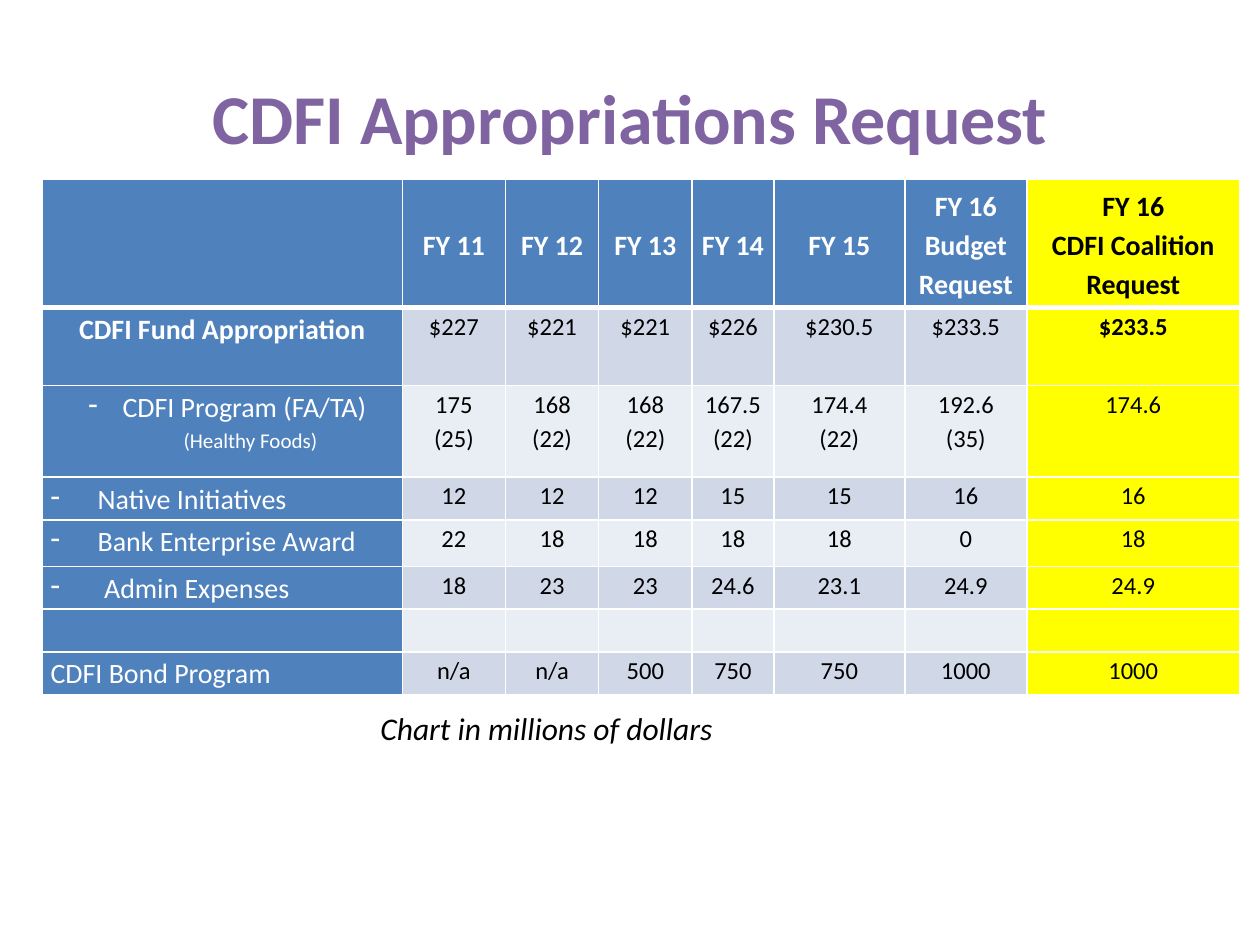
from lxml.etree import SubElement
from pptx import Presentation
from pptx.dml.color import RGBColor
from pptx.enum.text import MSO_ANCHOR, PP_ALIGN
from pptx.oxml.ns import qn
from pptx.util import Cm, Pt

COLORS = {
    "title": "8064A2", "header": "4F81BD", "band_dark": "D0D8E8",
    "band_light": "E9EDF4", "highlight": "FFFF00",
    "white": "FFFFFF", "black": "000000",
}
COLUMN_WIDTHS = [7.26, 2.08, 1.88, 1.88, 1.65, 2.64, 2.46, 4.29]
ROW_HEIGHTS = [2.59, 1.57, 1.85, 0.86, 0.94, 0.86, 0.86, 0.86]

HEADINGS = ["", "FY 11", "FY 12", "FY 13", "FY 14", "FY 15",
            "FY 16\nBudget\nRequest", "FY 16\nCDFI Coalition\nRequest"]

# Each label line: text, size, left margin, hanging indent (dash if nonzero)
LABELS = [
    [("CDFI Fund Appropriation", 16, 0, 0)],
    [("CDFI Program (FA/TA)", 16, 1.45, 0.69), ("(Healthy Foods)", 12, 2.68, 0)],
    [("Native Initiatives", 16, 0.95, 0.95)],
    [("Bank Enterprise Award", 16, 0.95, 0.95)],
    [("Admin Expenses", 16, 1.08, 1.08)],
    [],
    [("CDFI Bond Program", 16, 0, 0)],
]
VALUES = [
    ["$227", "$221", "$221", "$226", "$230.5", "$233.5", "$233.5"],
    ["175\n(25)", "168\n(22)", "168\n(22)", "167.5\n(22)", "174.4\n(22)",
     "192.6\n(35)", "174.6"],
    ["12", "12", "12", "15", "15", "16", "16"],
    ["22", "18", "18", "18", "18", "0", "18"],
    ["18", "23", "23", "24.6", "23.1", "24.9", "24.9"],
    [""] * 7,
    ["n/a", "n/a", "500", "750", "750", "1000", "1000"],
]


class SlideBuilder:
    font_name = "Calibri"
    line_spacing = 1.15

    def __init__(self, presentation):
        self.slide = presentation.slides.add_slide(presentation.slide_layouts[6])

    def style(self, paragraph, size, color, bold=False, italic=False,
              align=PP_ALIGN.CENTER):
        paragraph.alignment = align
        font = paragraph.font
        font.name, font.size = self.font_name, Pt(size)
        font.bold, font.italic = bold, italic
        font.color.rgb = RGBColor.from_string(COLORS[color])

    def text_box(self, text, left, top, width, height, size, color,
                 anchor=MSO_ANCHOR.TOP, **style):
        shape = self.slide.shapes.add_textbox(Cm(left), Cm(top), Cm(width), Cm(height))
        frame = shape.text_frame
        frame.word_wrap = True
        frame.vertical_anchor = anchor
        frame.text = text
        self.style(frame.paragraphs[0], size, color, **style)

    def table(self, left, top):
        shape = self.slide.shapes.add_table(
            len(ROW_HEIGHTS), len(COLUMN_WIDTHS), Cm(left), Cm(top),
            Cm(sum(COLUMN_WIDTHS)), Cm(sum(ROW_HEIGHTS)))
        table = shape.table
        table.horz_banding = False
        for column, width in zip(table.columns, COLUMN_WIDTHS):
            column.width = Cm(width)
        for row, height in zip(table.rows, ROW_HEIGHTS):
            row.height = Cm(height)
        return table

    def cell(self, cell, fill, bottom_border=1):
        cell.margin_left = cell.margin_right = Cm(0.17)
        cell.margin_top = cell.margin_bottom = 0
        properties = cell._tc.get_or_add_tcPr()
        for side in "LRTB":
            width = bottom_border if side == "B" else 1
            line = SubElement(properties, qn(f"a:ln{side}"), w=str(Pt(width)))
            line_fill = SubElement(line, qn("a:solidFill"))
            SubElement(line_fill, qn("a:srgbClr"), val=COLORS["white"])
        cell.fill.solid()
        cell.fill.fore_color.rgb = RGBColor.from_string(COLORS[fill])

    def cell_text(self, cell, text, size, color, bold=False):
        if not text:
            return
        cell.text_frame.text = text
        for paragraph in cell.text_frame.paragraphs:
            paragraph.line_spacing = self.line_spacing
            self.style(paragraph, size, color, bold)

    def label(self, cell, lines):
        frame = cell.text_frame
        for index, (text, size, margin, hanging) in enumerate(lines):
            paragraph = frame.add_paragraph() if index else frame.paragraphs[0]
            paragraph.text = text
            paragraph.line_spacing = self.line_spacing
            properties = paragraph._p.get_or_add_pPr()
            properties.set("marL", str(Cm(margin)))
            properties.set("indent", str(-Cm(hanging)))
            if hanging:
                SubElement(properties, qn("a:buChar"), char="-")
            self.style(paragraph, size, "white", align=PP_ALIGN.LEFT)


def main():
    presentation = Presentation()
    presentation.slide_width, presentation.slide_height = Cm(25.4), Cm(19.05)
    builder = SlideBuilder(presentation)

    # Title
    builder.text_box("CDFI Appropriations Request", 1.27, 0.76, 22.86, 3.18,
                     40, "title", MSO_ANCHOR.MIDDLE, bold=True)

    # Table header
    table = builder.table(0.85, 3.61)
    last = len(HEADINGS) - 1
    for column, heading in enumerate(HEADINGS):
        cell = table.cell(0, column)
        fill, color = (("highlight", "black") if column == last
                       else ("header", "white"))
        builder.cell(cell, fill, bottom_border=3)
        cell.vertical_anchor = MSO_ANCHOR.MIDDLE
        builder.cell_text(cell, heading, 16, color, bold=True)

    # Table body
    for row, (lines, values) in enumerate(zip(LABELS, VALUES), start=1):
        label_cell = table.cell(row, 0)
        builder.cell(label_cell, "header")
        if row == 1:
            builder.cell_text(label_cell, lines[0][0], 16, "white", bold=True)
        else:
            builder.label(label_cell, lines)
        band = "band_dark" if row % 2 else "band_light"
        for column, value in enumerate(values, start=1):
            cell = table.cell(row, column)
            builder.cell(cell, "highlight" if column == last else band)
            builder.cell_text(cell, value, 14, "black",
                              bold=row == 1 and column == last)

    # Caption
    builder.text_box("Chart in millions of dollars", 7.42, 14.17, 17.58, 1.02,
                     18, "black", italic=True, align=PP_ALIGN.LEFT)

    presentation.save("out.pptx")


if __name__ == "__main__":
    main()
